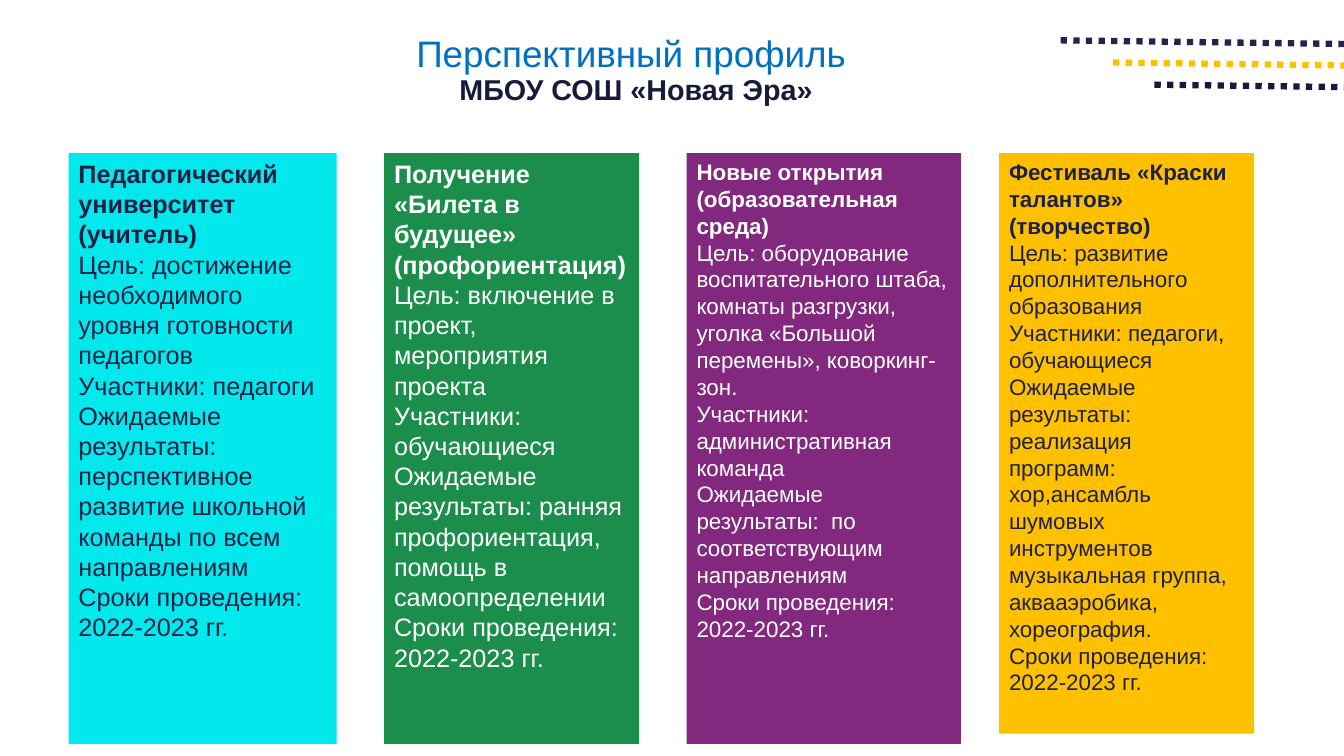
from pptx import Presentation
from pptx.dml.color import RGBColor
from pptx.enum.dml import MSO_LINE
from pptx.enum.shapes import MSO_CONNECTOR, MSO_SHAPE
from pptx.enum.text import MSO_ANCHOR, MSO_AUTO_SIZE, PP_ALIGN
from pptx.oxml.ns import qn
from pptx.util import Inches, Pt

CENTER, LEFT = PP_ALIGN.CENTER, PP_ALIGN.LEFT
TOP, MIDDLE = MSO_ANCHOR.TOP, MSO_ANCHOR.MIDDLE
NO_FIT = MSO_AUTO_SIZE.NONE
STRAIGHT, RECTANGLE = MSO_CONNECTOR.STRAIGHT, MSO_SHAPE.RECTANGLE
SYSTEM_DOT = MSO_LINE.ROUND_DOT

WHITE, NAVY, DARK, AMBER = "FFFFFF", "1E2146", "181A39", "FFC000"


def color(value):
    return RGBColor.from_string(value)


def write_lines(frame, lines, align, spacing):
    """Fill a frame with (text, size, colour, bold) paragraphs."""
    frame.word_wrap = True
    frame.auto_size = NO_FIT
    for index, (text, size, ink, bold) in enumerate(lines):
        para = frame.paragraphs[0] if index == 0 else frame.add_paragraph()
        para.text = text
        para.alignment = align
        para.line_spacing = spacing
        para.font.name = "Arial"
        para.font.size = Pt(size)
        para.font.bold = bold
        para.font.color.rgb = color(ink)


deck = Presentation()
deck.slide_width, deck.slide_height = Inches(13.33), Inches(7.5)
page = deck.slides.add_slide(deck.slide_layouts[5])

# Title
title = page.shapes.title
title.left, title.top = Inches(0.56), Inches(0.13)
title.width, title.height = Inches(11.5), Inches(1.15)
title.text_frame.vertical_anchor = MIDDLE
write_lines(title.text_frame, [
    ("Перспективный профиль ", 26.3, "0070C0", False),
    ("МБОУ СОШ «Новая Эра»", 20.5, DARK, True),
], CENTER, 0.9)

# Dotted lines in the corner
for left, top, ink in [(11.45, 0.84, DARK), (11.04, 0.62, AMBER), (10.52, 0.4, "22244E")]:
    dots = page.shapes.add_connector(
        STRAIGHT, Inches(left), Inches(top), Inches(left + 3.09), Inches(top + 0.04))
    dots.line.color.rgb = color(ink)
    dots.line.width = Pt(4.5)
    dots.line.dash_style = SYSTEM_DOT
    properties = dots.element.spPr
    properties.append(properties.makeelement(qn("a:effectLst"), {}))

# Project columns: left, width, height, fill, ink, size, heading lines, body lines
columns = [
    (0.68, 2.66, 5.86, "01E9EC", NAVY, 18,
     ["Педагогический университет (учитель)"],
     ["Цель: достижение необходимого уровня готовности педагогов",
      "Участники: педагоги",
      "Ожидаемые результаты: перспективное развитие школьной команды по всем направлениям",
      "Сроки проведения: 2022-2023 гг."]),
    (3.81, 2.53, 5.86, "1B8E4B", WHITE, 18,
     ["Получение «Билета в будущее» (профориентация)"],
     ["Цель: включение в проект, мероприятия проекта",
      "Участники: обучающиеся",
      "Ожидаемые результаты: ранняя профориентация, помощь в самоопределении",
      "Сроки проведения:",
      "2022-2023 гг."]),
    (6.81, 2.72, 5.86, "82287E", WHITE, 16,
     ["Новые открытия", "(образовательная среда)"],
     ["Цель: оборудование воспитательного штаба, комнаты разгрузки, "
      "уголка «Большой перемены», коворкинг-зон.",
      "Участники: административная команда",
      "Ожидаемые результаты:  по соответствующим направлениям",
      "Сроки проведения:",
      "2022-2023 гг."]),
    (9.91, 2.53, 5.76, AMBER, NAVY, 16,
     ["Фестиваль «Краски талантов» (творчество)"],
     ["Цель: развитие дополнительного образования",
      "Участники: педагоги, обучающиеся",
      "Ожидаемые результаты: реализация программ: хор,ансамбль шумовых "
      "инструментов музыкальная группа, аквааэробика, хореография.",
      "Сроки проведения: 2022-2023 гг."]),
]
for left, width, height, fill, ink, size, heading, body in columns:
    box = page.shapes.add_shape(
        RECTANGLE, Inches(left), Inches(1.52), Inches(width), Inches(height))
    box.shadow.inherit = False
    box.fill.solid()
    box.fill.fore_color.rgb = color(fill)
    box.line.fill.background()
    box.text_frame.vertical_anchor = TOP
    lines = [(text, size, ink, True) for text in heading]
    lines += [(text, size, ink, False) for text in body]
    write_lines(box.text_frame, lines, LEFT, 1.0)

deck.save("out.pptx")
